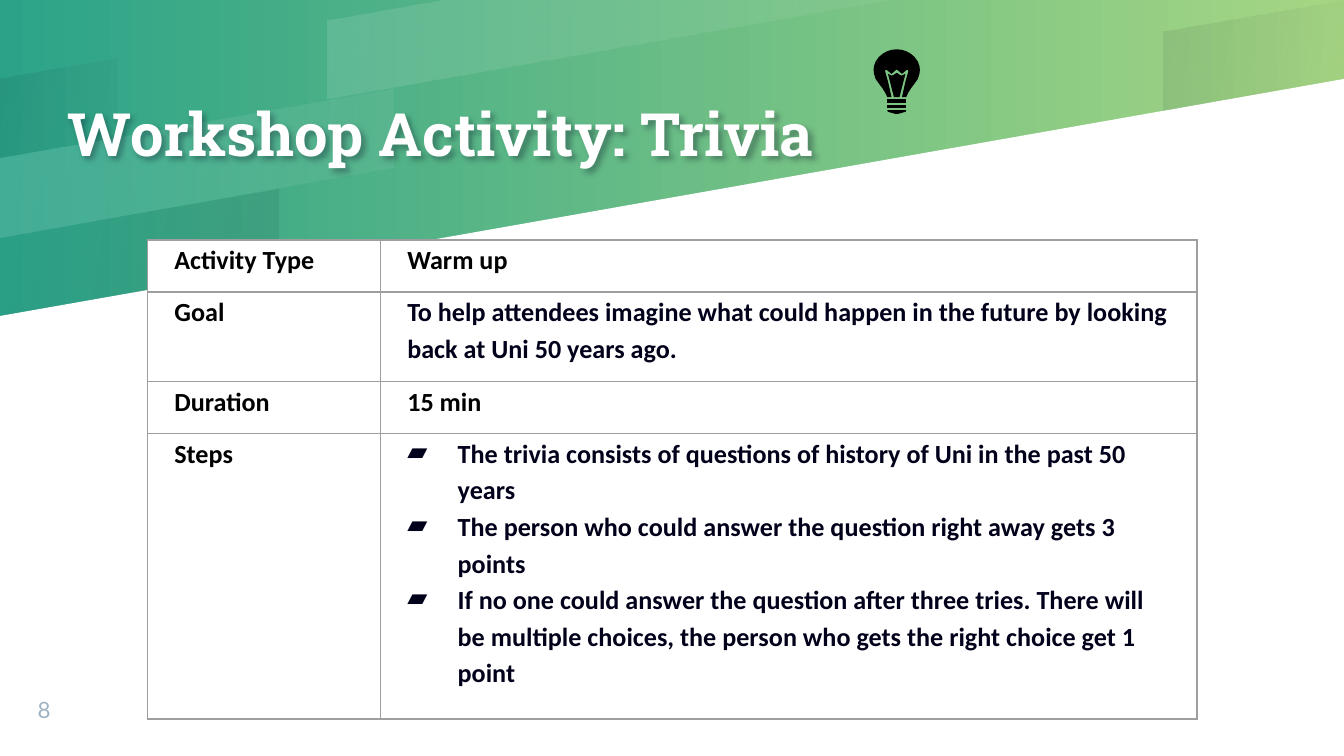
"""Build the workshop trivia slide with its banner, light bulb and activity table."""
from lxml import etree
from pptx import Presentation
from pptx.dml.color import RGBColor
from pptx.enum.text import MSO_ANCHOR
from pptx.oxml.ns import qn
from pptx.util import Pt

MIDDLE, BOTTOM = MSO_ANCHOR.MIDDLE, MSO_ANCHOR.BOTTOM

WHITE = RGBColor(0xFF, 0xFF, 0xFF)
BLACK = RGBColor(0, 0, 0)
NAVY = RGBColor(0x00, 0x00, 0x1A)
TEAL = RGBColor(0x2C, 0xA3, 0x88)
LIME = RGBColor(0xA6, 0xD6, 0x83)
GREY_BLUE = RGBColor(0x9E, 0xB3, 0xC2)
BORDER = RGBColor(0x9E, 0x9E, 0x9E)

WEDGE = [(0, 405), (720, 405), (720, 42.3), (0, 169.3)]
BANDS = [
    ([(239, 0), (175.5, 11), (175.5, 53), (479, 0)], WHITE, (12, 5)),
    ([(0, 42), (0, 84.5), (63, 73.5), (63, 31)], NAVY, (8, 2)),
    ([(0, 127), (0, 169.3), (149, 143), (149, 101)], NAVY, (2, 8)),
    ([(720, 0), (623.5, 17), (623.5, 59.3), (720, 42.3)], NAVY, (8, 2)),
    ([(0, 84.5), (0, 127), (211, 89.5), (211, 47.3)], WHITE, (12, 5)),
]

BULB_CENTER = 480.4
BULB_HALVES = [
    [(5, 56.2), (5, 58)],
    [(5, 53.2), (5, 55)],
    [(5, 59), (5, 59.6), (4.5, 60), (0.5, 61.1)],
    [(0, 39), (2.3, 40.5), (3.2, 40.3), (4.7, 39.5), (1.5, 52)],
    [(0, 26.4), (2.6, 26.7), (5, 27.4), (7.4, 28.7), (9.6, 30.6), (11.3, 33),
     (12.2, 35.5), (12.4, 37.4), (12.2, 39.5), (11.3, 42.3), (9.6, 44.7),
     (7.5, 47.5), (6, 50), (5.1, 52), (2.8, 52), (4.6, 44), (6.3, 38),
     (5.9, 37.4), (5.4, 37.4), (2.8, 39.6), (0.3, 37.4), (0, 37.3)],
]

COL_WIDTHS = [124.8, 437.5]
ROW_HEIGHTS = [27.8, 48.2, 27.8, 152.8]
ACTIVITY = [
    ("Activity Type", "Warm up", BLACK),
    ("Goal", "To help attendees imagine what could happen in the future by "
     "looking back at Uni 50 years ago.", NAVY),
    ("Duration", "15 min", BLACK),
]
STEPS = [
    "The trivia consists of questions of history of Uni in the past 50 years",
    "The person who could answer the question right away gets 3 points",
    "If no one could answer the question after three tries. There will be "
    "multiple choices, the person who gets the right choice get 1 point",
]


def add_child(parent, tag, **attrs):
    """Append a DrawingML element and return it."""
    return etree.SubElement(parent, qn(tag), {k: str(v) for k, v in attrs.items()})


def add_color(parent, color):
    """Append a solid fill of one colour."""
    add_child(add_child(parent, "a:solidFill"), "a:srgbClr", val=color)


def set_gradient(fill, colors, angle, alphas=()):
    """Give a fill two gradient stops, optionally with opacity in percent."""
    fill.gradient()
    fill.gradient_angle = angle
    for stop, color in zip(fill.gradient_stops, colors):
        stop.color.rgb = color
    for rgb, alpha in zip(fill._fill._gradFill.iter(qn("a:srgbClr")), alphas):
        add_child(rgb, "a:alpha", val=alpha * 1000)


def add_polygon(slide, points):
    """Draw a closed outline without line or shadow."""
    pts = [(Pt(x), Pt(y)) for x, y in points]
    fb = slide.shapes.build_freeform(*pts[0])
    fb.add_line_segments(pts[1:])
    s = fb.convert_to_shape()
    s.shadow.inherit = False
    s.line.fill.background()
    return s


def add_solid(slide, points, color):
    """Draw a polygon in one colour."""
    s = add_polygon(slide, points)
    s.fill.solid()
    s.fill.fore_color.rgb = color


def add_banner(slide):
    """Draw the gradient background, white wedge and translucent bands."""
    set_gradient(slide.background.fill, (TEAL, LIME), 0)
    add_solid(slide, WEDGE, WHITE)
    for points, color, alphas in BANDS:
        s = add_polygon(slide, points)
        set_gradient(s.fill, (color, color), 350, alphas)


def add_bulb(slide):
    """Draw the light bulb from half outlines mirrored about its centre."""
    for half in BULB_HALVES:
        right = [(BULB_CENTER + dx, y) for dx, y in half]
        left = [(BULB_CENTER - dx, y) for dx, y in reversed(half)]
        add_solid(slide, right + left, BLACK)


def add_run(p, text, size, font, color, bold=False):
    """Append one formatted run to a paragraph."""
    r = p.add_run()
    r.text = text
    r.font.size = Pt(size)
    r.font.name = font
    r.font.bold = bold
    r.font.color.rgb = color


def add_text(slide, box, anchor, text, **style):
    """Add a text box without margins holding one run."""
    s = slide.shapes.add_textbox(*(Pt(v) for v in box))
    tf = s.text_frame
    tf.word_wrap = True
    tf.vertical_anchor = anchor
    tf.margin_left = tf.margin_right = tf.margin_top = tf.margin_bottom = 0
    add_run(tf.paragraphs[0], text, **style)
    return s


def add_shadow(s):
    """Give a shape a soft dark shadow to the lower right."""
    effects = add_child(s._element.spPr, "a:effectLst")
    shadow = add_child(effects, "a:outerShdw", blurRad=Pt(3), dist=Pt(2),
                       dir=2700000, algn="tl", rotWithShape=0)
    rgb = add_child(shadow, "a:srgbClr", val=NAVY)
    add_child(rgb, "a:alpha", val=30000)


def set_bullet(p):
    """Give a paragraph a hanging parallelogram bullet."""
    pPr = p._p.get_or_add_pPr()
    pPr.set("marL", str(Pt(27)))
    pPr.set("indent", str(Pt(-27)))
    rgb = add_child(pPr, "a:buClr")
    add_child(rgb, "a:srgbClr", val=NAVY)
    add_child(pPr, "a:buChar", char="▰")


def fill_cell(cell, texts, color, bullets=False):
    """Write paragraphs into a white cell with thin grey borders."""
    cell.margin_left = cell.margin_right = Pt(14.4)
    cell.margin_top = cell.margin_bottom = 0
    tcPr = cell._tc.get_or_add_tcPr()
    for side in ("a:lnL", "a:lnR", "a:lnT", "a:lnB"):
        add_color(add_child(tcPr, side, w=Pt(0.75)), BORDER)
    cell.fill.solid()
    cell.fill.fore_color.rgb = WHITE
    tf = cell.text_frame
    for i, text in enumerate(texts):
        p = tf.add_paragraph() if i else tf.paragraphs[0]
        p.line_spacing = 1.15
        if i == 0 and color == NAVY:
            p.space_before = Pt(6)
        if bullets:
            set_bullet(p)
        add_run(p, text, 14, "Calibri", color, True)


def add_activity_table(slide):
    """Add the two-column table describing the activity."""
    rows = [(label, [text], color) for label, text, color in ACTIVITY]
    rows.append(("Steps", STEPS, NAVY))
    frame = slide.shapes.add_table(len(rows), len(COL_WIDTHS), Pt(79), Pt(128.6),
                                   Pt(sum(COL_WIDTHS)), Pt(sum(ROW_HEIGHTS)))
    table = frame.table
    table.first_row = table.horz_banding = False
    for col, width in zip(table.columns, COL_WIDTHS):
        col.width = Pt(width)
    for i, (label, texts, color) in enumerate(rows):
        table.rows[i].height = Pt(ROW_HEIGHTS[i])
        fill_cell(table.cell(i, 0), [label], BLACK)
        fill_cell(table.cell(i, 1), texts, color, bullets=texts is STEPS)


def main():
    """Assemble and save the slide."""
    prs = Presentation()
    prs.slide_width, prs.slide_height = Pt(720), Pt(405)
    slide = prs.slides.add_slide(prs.slide_layouts[6])
    add_banner(slide)
    title = add_text(slide, (36, 0, 432, 142.6), MIDDLE, "Workshop Activity: Trivia",
                     size=32, font="Roboto Slab", color=WHITE, bold=True)
    add_shadow(title)
    add_text(slide, (20.2, 368, 38, 19.4), BOTTOM, "8",
             size=12, font="Lato", color=GREY_BLUE)
    add_bulb(slide)
    add_activity_table(slide)
    prs.save("out.pptx")


if __name__ == "__main__":
    main()
